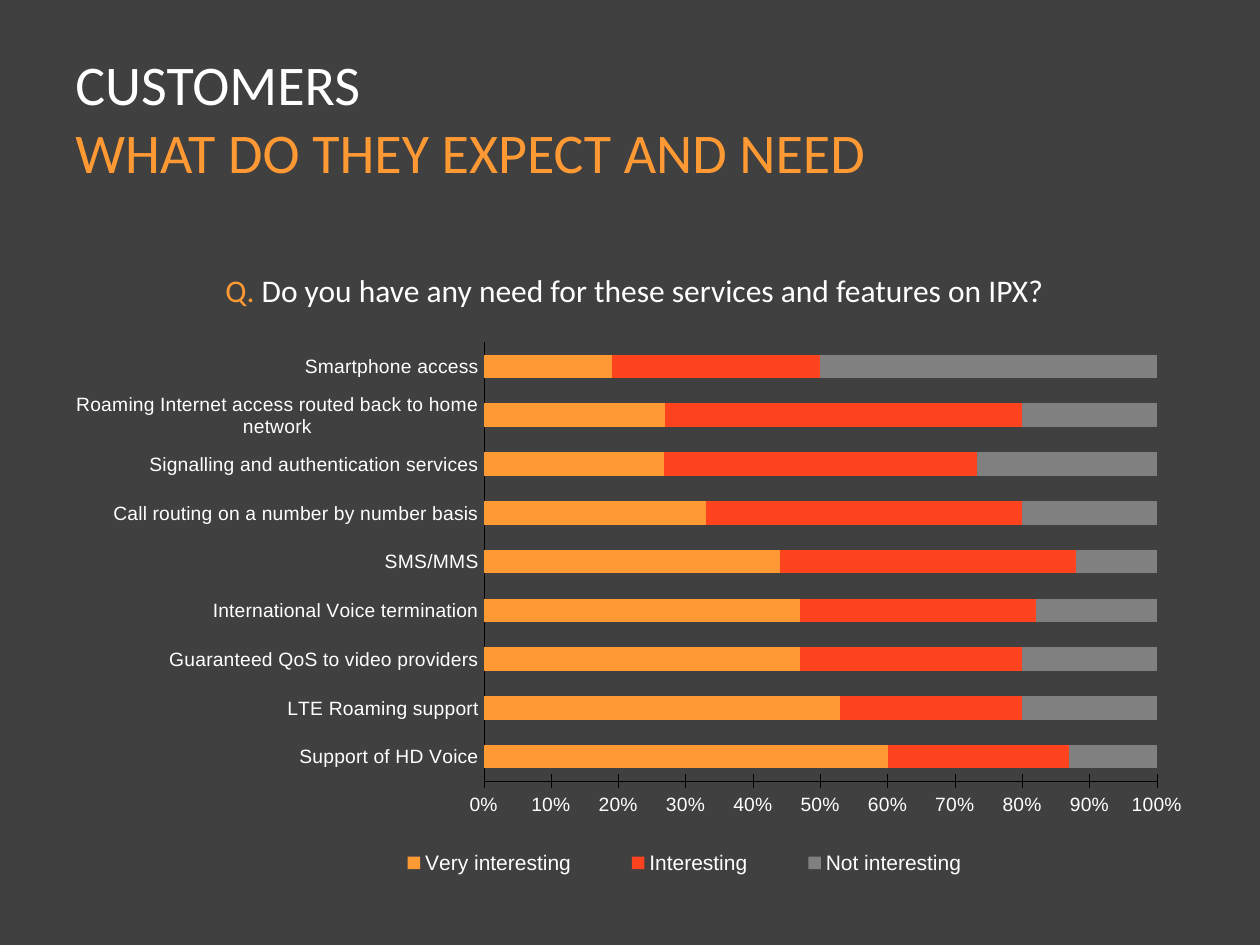
from lxml import etree
from pptx import Presentation
from pptx.chart.data import CategoryChartData
from pptx.dml.color import RGBColor
from pptx.enum.chart import XL_CHART_TYPE, XL_LEGEND_POSITION, XL_TICK_MARK
from pptx.enum.text import MSO_ANCHOR
from pptx.oxml.ns import qn
from pptx.util import Emu, Pt

STACKED = XL_CHART_TYPE.BAR_STACKED_100
BOTTOM = XL_LEGEND_POSITION.BOTTOM
NONE, CROSS = XL_TICK_MARK.NONE, XL_TICK_MARK.CROSS
MIDDLE = MSO_ANCHOR.MIDDLE
SCALE = 914400 / 126
BACK, WHITE, BLACK = "404040", "FFFFFF", "000000"
ORANGE, RED, GREY = "FF9933", "FE431E", "808080"

CATS = [
    "Support of HD Voice",
    "LTE Roaming support",
    "Guaranteed QoS to video providers",
    "International Voice termination",
    "SMS/MMS",
    "Call routing on a number by number basis",
    "Signalling and authentication services",
    "Roaming Internet access routed back to home network",
    "Smartphone access",
]
SERIES = [
    ("Very interesting", ORANGE, [60, 53, 47, 47, 44, 33, 27, 27, 19]),
    ("Interesting", RED, [27, 27, 33, 35, 44, 47, 47, 53, 31]),
    ("Not interesting", GREY, [13, 20, 20, 18, 12, 20, 27, 20, 50]),
]


def px(num):
    return Emu(round(num * SCALE))


def color(code):
    return RGBColor.from_string(code)


def style(font, face, size, code):
    font.name = face
    font.size = Pt(size)
    font.color.rgb = color(code)


def add_text(slide, box, size, lines):
    frame = slide.shapes.add_textbox(*map(px, box)).text_frame
    frame.word_wrap = True
    frame.vertical_anchor = MIDDLE
    para = frame.paragraphs[0]
    for row, runs in enumerate(lines):
        if row:
            para.add_line_break()
        for words, code in runs:
            run = para.add_run()
            run.text = words
            style(run.font, "Calibri", size, code)


def set_layout(node, after, box, inner=False):
    for old in node.findall(qn("c:layout")):
        node.remove(old)
    layout = etree.Element(qn("c:layout"))
    manual = etree.SubElement(layout, qn("c:manualLayout"))
    parts = [("layoutTarget", "inner")] if inner else []
    parts += [("xMode", "edge"), ("yMode", "edge")]
    parts += zip("xywh", map(str, box))
    for tag, val in parts:
        etree.SubElement(manual, qn("c:" + tag)).set("val", val)
    if after is None:
        node.insert(0, layout)
    else:
        after.addnext(layout)


def style_axis(axis, tick):
    axis.has_major_gridlines = False
    axis.major_tick_mark = tick
    axis.minor_tick_mark = NONE
    axis.format.line.color.rgb = color(BLACK)
    axis.format.line.width = Pt(0.25)
    style(axis.tick_labels.font, "Arial", 11, WHITE)


def add_bars(slide, box):
    data = CategoryChartData(number_format="0")
    data.categories = CATS
    for name, _, vals in SERIES:
        data.add_series(name, vals)
    chart = slide.shapes.add_chart(STACKED, *map(px, box), data).chart
    chart.has_title = False
    style(chart.font, "Arial", 9, BLACK)
    plot = chart.plots[0]
    plot.gap_width = 107
    plot.overlap = 100
    plot.vary_by_categories = False
    for bar, (_, code, _) in zip(plot.series, SERIES):
        bar.format.fill.solid()
        bar.format.fill.fore_color.rgb = color(code)
    style_axis(chart.category_axis, NONE)
    scale = chart.value_axis
    style_axis(scale, CROSS)
    scale.minimum_scale, scale.maximum_scale = 0, 1
    scale.major_unit = 0.1
    scale.tick_labels.number_format = "0%"
    scale.tick_labels.number_format_is_linked = False
    chart.has_legend = True
    legend = chart.legend
    legend.position = BOTTOM
    legend.include_in_layout = False
    style(legend.font, "Arial", 12, WHITE)
    root = chart.element
    set_layout(root.find(".//" + qn("c:plotArea")), None,
               (0.38, 0.15, 0.57, 0.67), True)
    key = root.find(".//" + qn("c:legend"))
    set_layout(key, key.find(qn("c:legendPos")), (0.27, 0.92, 0.56, 0.05))


def main():
    deck = Presentation()
    deck.slide_width, deck.slide_height = px(1260), px(945)
    slide = deck.slides.add_slide(deck.slide_layouts[6])
    fill = slide.background.fill
    fill.solid()
    fill.fore_color.rgb = color(BACK)
    add_text(slide, (63, 38, 1134, 158), 32, [
        [("CUSTOMERS", WHITE)],
        [("WHAT DO THEY EXPECT AND NEED", ORANGE)],
    ])
    add_bars(slide, (35, 244, 1181, 655))
    add_text(slide, (213, 265, 863, 50), 18, [[
        ("Q. ", ORANGE),
        ("Do you have any need for these services and features on IPX?", WHITE),
    ]])
    deck.save("out.pptx")


if __name__ == "__main__":
    main()
